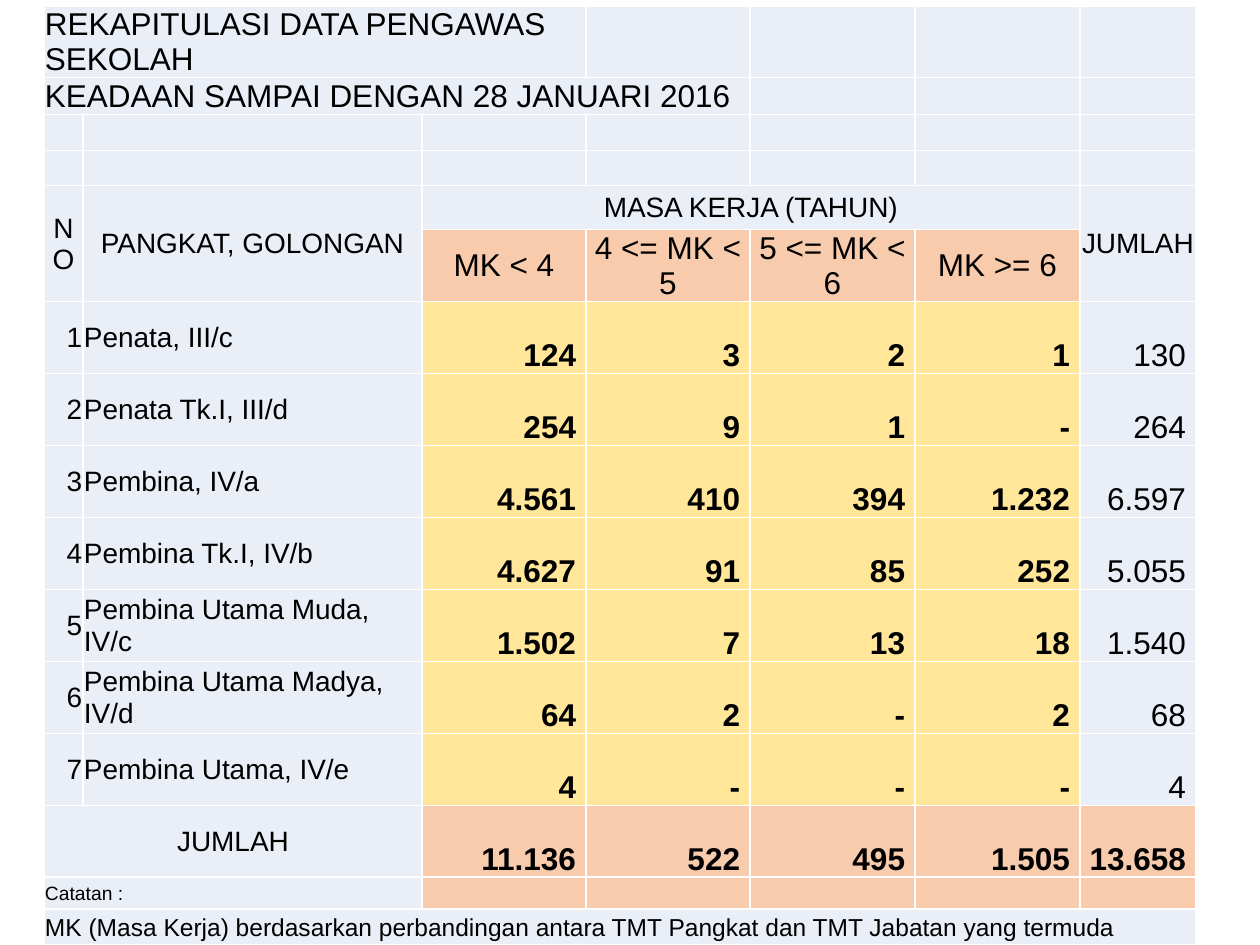
from dataclasses import dataclass

from lxml.etree import SubElement
from pptx import Presentation
from pptx.dml.color import RGBColor
from pptx.enum.text import MSO_ANCHOR as Anchor, PP_ALIGN as Align
from pptx.oxml import parse_xml
from pptx.oxml.ns import nsdecls, qn
from pptx.util import Emu, Pt


@dataclass(frozen=True)
class Theme:
    """Colours, font and type sizes of the slide."""

    font: str = "Arial"
    text: str = "000000"
    border: str = "FFFFFF"
    base: str = "EAEFF7"
    accent: str = "F8CBAD"
    data: str = "FFE699"
    large: int = 18
    label: int = 16
    note: int = 14
    small: int = 11


THEME = Theme()
PX = 914400 / 126
COLUMN_WIDTHS = [39, 339, 164, 164, 165, 165, 116]
ROW_HEIGHTS = [71, 37, 36, 35, 44] + [72] * 9 + [32, 36]
TITLES = ["REKAPITULASI DATA PENGAWAS SEKOLAH", "KEADAAN SAMPAI DENGAN 28 JANUARI 2016"]
PERIODS = ["MK < 4", "4 <= MK < 5", "5 <= MK < 6", "MK >= 6"]
RANKS = [
    ("Penata, III/c", ["124", "3", "2", "1", "130"]),
    ("Penata Tk.I, III/d", ["254", "9", "1", "-", "264"]),
    ("Pembina, IV/a", ["4.561", "410", "394", "1.232", "6.597"]),
    ("Pembina Tk.I, IV/b", ["4.627", "91", "85", "252", "5.055"]),
    ("Pembina Utama Muda, IV/c", ["1.502", "7", "13", "18", "1.540"]),
    ("Pembina Utama Madya, IV/d", ["64", "2", "-", "2", "68"]),
    ("Pembina Utama, IV/e", ["4", "-", "-", "-", "4"]),
]
TOTALS = ["11.136", "522", "495", "1.505", "13.658"]
NOTE = "MK (Masa Kerja) berdasarkan perbandingan antara TMT Pangkat dan TMT Jabatan yang termuda"
HEADER_ROW, PERIOD_ROW, FIRST_RANK_ROW, TOTAL_ROW, REMARK_ROW, NOTE_ROW = 4, 5, 6, 13, 14, 15
FIRST_VALUE, LAST_VALUE, SUM_COLUMN = 2, 5, 6


def px(length):
    """Turn a length in px into EMU."""
    return Emu(round(length * PX))


def fill_colour(row, column):
    """Return the fill that belongs to a table position."""
    if row in (TOTAL_ROW, REMARK_ROW) and column >= FIRST_VALUE:
        return THEME.accent
    if FIRST_VALUE <= column <= LAST_VALUE:
        if row == PERIOD_ROW:
            return THEME.accent
        if FIRST_RANK_ROW <= row < TOTAL_ROW:
            return THEME.data
    return THEME.base


def style_cell(cell, colour):
    """Set the fill, margins and white borders of a cell."""
    cell.fill.solid()
    cell.fill.fore_color.rgb = RGBColor.from_string(colour)
    cell.margin_left = cell.margin_right = cell.margin_top = px(1)
    cell.margin_bottom = 0
    properties = cell._tc.get_or_add_tcPr()
    for index, side in enumerate(("lnL", "lnR", "lnT", "lnB")):
        line = parse_xml(
            f'<a:{side} {nsdecls("a")} w="{Pt(1)}"><a:solidFill>'
            f'<a:srgbClr val="{THEME.border}"/></a:solidFill></a:{side}>'
        )
        properties.insert(index, line)


def write_cell(cell, text, size, align=Align.LEFT, anchor=Anchor.MIDDLE, bold=False):
    """Write one run of text into a cell."""
    cell.vertical_anchor = anchor
    paragraph = cell.text_frame.paragraphs[0]
    paragraph.alignment = align
    run = paragraph.add_run()
    run.text = text
    run.font.name = THEME.font
    run.font.size = Pt(size)
    run.font.bold = bold
    run.font.color.rgb = RGBColor.from_string(THEME.text)


def write_value(cell, text, bold):
    """Write a number at the lower right of a cell."""
    write_cell(cell, text, THEME.large, Align.RIGHT, Anchor.BOTTOM, bold)
    cell.margin_right = px(10)


def shrink_empty_cells(table):
    """Keep the blank cells from stretching their rows."""
    for cell in table.iter_cells():
        paragraph = cell.text_frame.paragraphs[0]
        if not paragraph.runs:
            SubElement(paragraph._p, qn("a:endParaRPr"), sz=str(THEME.small * 100))


def add_grid(slide):
    """Add the styled, still empty table."""
    shape = slide.shapes.add_table(
        len(ROW_HEIGHTS), len(COLUMN_WIDTHS), px(44), px(6),
        px(sum(COLUMN_WIDTHS)), px(sum(ROW_HEIGHTS)),
    )
    table = shape.table
    table.first_row = table.horz_banding = False
    for column, width in zip(table.columns, COLUMN_WIDTHS):
        column.width = px(width)
    for row, height in zip(table.rows, ROW_HEIGHTS):
        row.height = px(height)
    for row in range(len(ROW_HEIGHTS)):
        for column in range(len(COLUMN_WIDTHS)):
            style_cell(table.cell(row, column), fill_colour(row, column))
    return table


def merge(table, row, column, last_row, last_column):
    """Merge a block of cells and return its first cell."""
    cell = table.cell(row, column)
    cell.merge(table.cell(last_row, last_column))
    return cell


def write_headings(table):
    """Write the titles and the column headings."""
    for row, title in enumerate(TITLES):
        cell = merge(table, row, 0, row, row + 2)
        write_cell(cell, title, THEME.large, anchor=Anchor.BOTTOM)
    for column, text in ((0, "NO"), (1, "PANGKAT, GOLONGAN"), (SUM_COLUMN, "JUMLAH")):
        cell = merge(table, HEADER_ROW, column, PERIOD_ROW, column)
        write_cell(cell, text, THEME.label, Align.CENTER)
    cell = merge(table, HEADER_ROW, FIRST_VALUE, HEADER_ROW, LAST_VALUE)
    write_cell(cell, "MASA KERJA (TAHUN)", THEME.label, Align.CENTER)
    for column, period in enumerate(PERIODS, FIRST_VALUE):
        write_cell(table.cell(PERIOD_ROW, column), period, THEME.large, Align.CENTER)


def write_ranks(table):
    """Write one numbered row for each rank."""
    for number, (rank, values) in enumerate(RANKS, 1):
        row = FIRST_RANK_ROW + number - 1
        write_cell(table.cell(row, 0), str(number), THEME.label, Align.RIGHT)
        write_cell(table.cell(row, 1), rank, THEME.label)
        for column, value in enumerate(values, FIRST_VALUE):
            write_value(table.cell(row, column), value, column < SUM_COLUMN)


def write_footer(table):
    """Write the totals and the closing remark."""
    write_cell(merge(table, TOTAL_ROW, 0, TOTAL_ROW, 1), "JUMLAH", THEME.label, Align.CENTER)
    for column, total in enumerate(TOTALS, FIRST_VALUE):
        write_value(table.cell(TOTAL_ROW, column), total, True)
    write_cell(merge(table, REMARK_ROW, 0, REMARK_ROW, 1), "Catatan :", THEME.small)
    write_cell(merge(table, NOTE_ROW, 0, NOTE_ROW, SUM_COLUMN), NOTE, THEME.note)


def main():
    """Build the slide and save it."""
    presentation = Presentation()
    presentation.slide_width, presentation.slide_height = px(1260), px(945)
    slide = presentation.slides.add_slide(presentation.slide_layouts[6])
    table = add_grid(slide)
    write_headings(table)
    write_ranks(table)
    write_footer(table)
    shrink_empty_cells(table)
    presentation.save("out.pptx")


if __name__ == "__main__":
    main()
